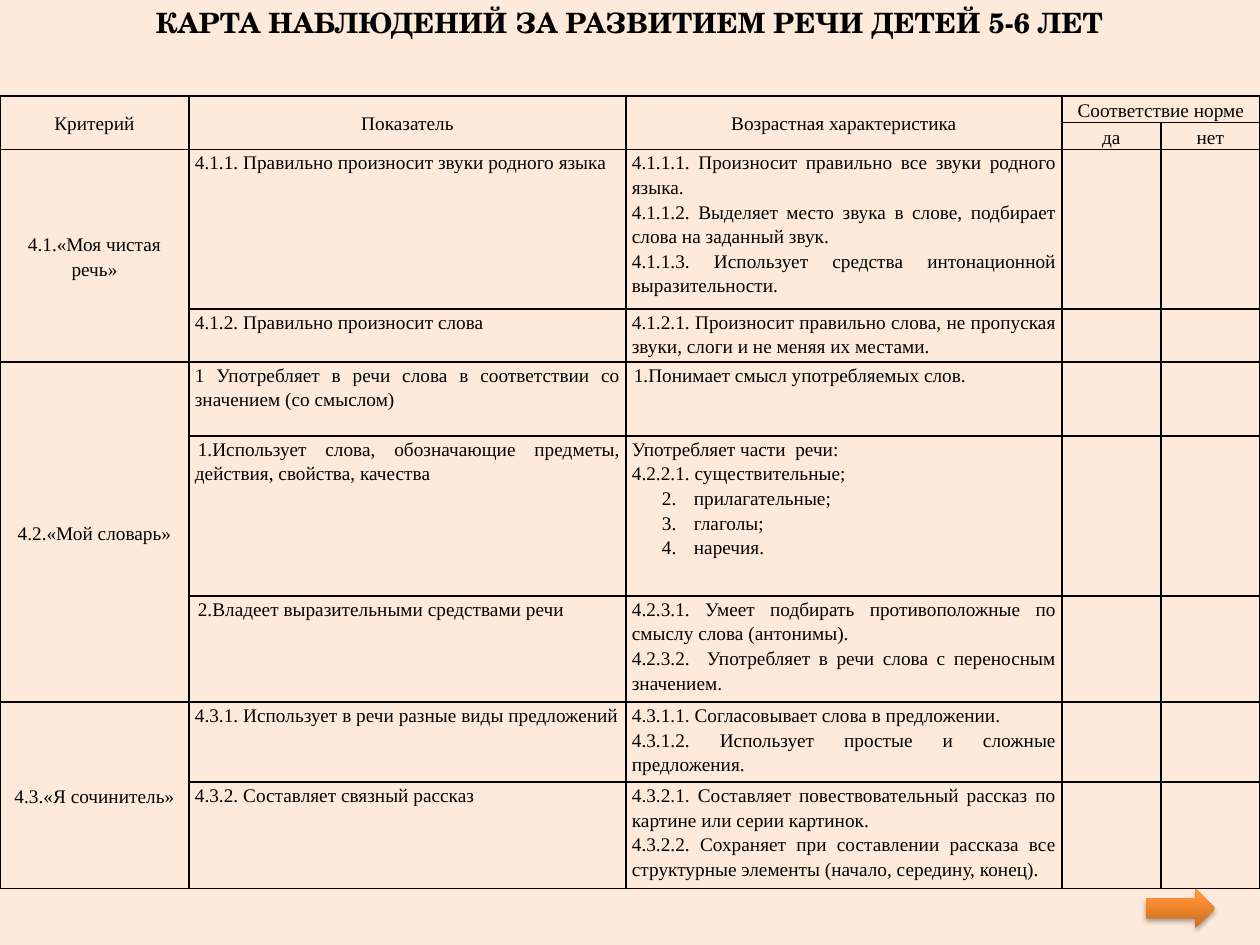
from lxml.etree import SubElement
from pptx import Presentation
from pptx.dml.color import RGBColor
from pptx.enum.shapes import MSO_SHAPE as SHAPE
from pptx.enum.text import MSO_ANCHOR as ANCHOR, PP_ALIGN as ALIGN
from pptx.oxml.ns import qn
from pptx.util import Emu, Pt

PX = 914400 // 126
COLORS = {"background": "FDEADA", "ink": "000000",
          "arrow_dark": "CC6E20", "arrow_light": "FF9034"}
TITLE_FONT, TABLE_FONT = "TeX Gyre Schola", "Times New Roman"

TITLE = "КАРТА НАБЛЮДЕНИЙ ЗА РАЗВИТИЕМ РЕЧИ ДЕТЕЙ 5-6 ЛЕТ"
HEADERS = ["Критерий", "Показатель", "Возрастная характеристика"]
NORM, NORM_ANSWERS = "Соответствие норме", ["да", "нет"]

# A numbered paragraph is (text, first number, level, left margin px, indent px)
CRITERIA = [
    ("4.1.«Моя чистая речь»", [
        (["4.1.1. Правильно произносит звуки родного языка"],
         ["4.1.1.1. Произносит правильно все звуки родного языка.",
          "4.1.1.2. Выделяет место звука в слове, подбирает слова на заданный звук.",
          "4.1.1.3. Использует средства интонационной выразительности."]),
        (["4.1.2. Правильно произносит слова"],
         ["4.1.2.1. Произносит правильно слова, не пропуская звуки, слоги и не меняя их местами."]),
    ]),
    ("4.2.«Мой словарь»", [
        (["1 Употребляет в речи слова в соответствии со значением (со смыслом)"],
         [("Понимает смысл употребляемых слов.", 1, 3, 0, 2)]),
        ([("Использует слова, обозначающие предметы, действия, свойства, качества", 1, 2, 0, 3)],
         ["Употребляет части  речи:",
          "4.2.2.1. существительные;",
          ("прилагательные;", 2, 3, 62, -32),
          ("глаголы;", 2, 3, 62, -32),
          ("наречия.", 2, 3, 62, -32)]),
        ([("Владеет выразительными средствами речи", 2, 2, 0, 3)],
         ["4.2.3.1. Умеет подбирать противоположные по смыслу слова (антонимы).",
          "4.2.3.2.  Употребляет в речи слова с переносным значением."]),
    ]),
    ("4.3.«Я сочинитель»", [
        (["4.3.1. Использует в речи разные виды предложений"],
         ["4.3.1.1. Согласовывает слова в предложении.",
          "4.3.1.2. Использует простые и сложные предложения."]),
        (["4.3.2. Составляет связный рассказ"],
         ["4.3.2.1. Составляет повествовательный рассказ по картине или серии картинок.",
          "4.3.2.2. Сохраняет при составлении рассказа все структурные элементы (начало, середину, конец)."]),
    ]),
]
COLUMN_WIDTHS = [189, 437, 436, 99, 99]
ROW_HEIGHTS = [26, 27, 159, 53, 74, 160, 105, 80, 106]
TABLE_TOP = 96


def px(*lengths):
    return [Emu(length * PX) for length in lengths]


def color(name):
    return RGBColor.from_string(COLORS[name])


def add_run(paragraph, text, font, size, bold=False):
    run = paragraph.add_run()
    run.text = text
    run.font.name, run.font.size, run.font.bold = font, Pt(size), bold
    run.font.color.rgb = color("ink")


def number(paragraph, start, level, margin, indent):
    paragraph.level = level
    props = paragraph._p.get_or_add_pPr()
    props.set("marL", str(margin * PX))
    props.set("indent", str(indent * PX))
    SubElement(props, qn("a:buFont"), typeface="+mj-lt")
    SubElement(props, qn("a:buAutoNum"), type="arabicPeriod", startAt=str(start))


def write(cell, items, align=ALIGN.JUSTIFY, anchor=ANCHOR.TOP):
    cell.vertical_anchor = anchor
    for index, item in enumerate(items):
        frame = cell.text_frame
        paragraph = frame.add_paragraph() if index else frame.paragraphs[0]
        paragraph.alignment, paragraph.line_spacing = align, 1.15
        text, *numbering = [item] if isinstance(item, str) else item
        if numbering:
            number(paragraph, *numbering)
        add_run(paragraph, text, TABLE_FONT, 11)


def write_centred(cell, text):
    write(cell, [text], ALIGN.CENTER, ANCHOR.MIDDLE)


def style_cell(cell):
    cell.margin_left, cell.margin_right, cell.margin_top, cell.margin_bottom = px(6, 6, 0, 0)
    props = cell._tc.get_or_add_tcPr()
    for side in ("lnL", "lnR", "lnT", "lnB"):
        line = SubElement(props, qn(f"a:{side}"), w=str(Pt(1)))
        fill = SubElement(line, qn("a:solidFill"))
        SubElement(fill, qn("a:srgbClr"), val=COLORS["ink"])
    cell.fill.background()


def add_title(slide):
    frame = slide.shapes.add_textbox(*px(0, -1, 1260, 47)).text_frame
    frame.word_wrap = True
    frame.paragraphs[0].alignment = ALIGN.CENTER
    add_run(frame.paragraphs[0], TITLE, TITLE_FONT, 16, bold=True)


def add_observation_table(slide):
    table = slide.shapes.add_table(
        len(ROW_HEIGHTS), len(COLUMN_WIDTHS),
        *px(0, TABLE_TOP, sum(COLUMN_WIDTHS), sum(ROW_HEIGHTS))).table
    table.first_row = table.horz_banding = False
    for column, width in zip(table.columns, px(*COLUMN_WIDTHS)):
        column.width = width
    for row, height in zip(table.rows, px(*ROW_HEIGHTS)):
        row.height = height
    for cell in table.iter_cells():
        style_cell(cell)

    for col, header in enumerate(HEADERS):
        table.cell(0, col).merge(table.cell(1, col))
        write_centred(table.cell(0, col), header)
    norm_col = len(HEADERS)
    table.cell(0, norm_col).merge(table.cell(0, norm_col + 1))
    write_centred(table.cell(0, norm_col), NORM)
    for col, answer in enumerate(NORM_ANSWERS, norm_col):
        write_centred(table.cell(1, col), answer)

    top = 2
    for criterion, indicators in CRITERIA:
        table.cell(top, 0).merge(table.cell(top + len(indicators) - 1, 0))
        write_centred(table.cell(top, 0), criterion)
        for row, (indicator, traits) in enumerate(indicators, top):
            write(table.cell(row, 1), indicator)
            write(table.cell(row, 2), traits)
        top += len(indicators)


def add_next_arrow(slide):
    arrow = slide.shapes.add_shape(SHAPE.RIGHT_ARROW, *px(1146, 889, 69, 39))
    arrow.line.fill.background()
    arrow.fill.gradient()
    arrow.fill.gradient_angle = 90
    stops = zip(arrow.fill.gradient_stops, ("arrow_dark", "arrow_light"), (0, 0.8))
    for stop, name, position in stops:
        stop.color.rgb, stop.position = color(name), position
    arrow.shadow.inherit = False
    effects = arrow._element.spPr.find(qn("a:effectLst"))
    shadow = SubElement(effects, qn("a:outerShdw"), blurRad=str(Pt(3.1)),
                        dist=str(Pt(1.8)), dir="5400000", rotWithShape="0")
    tint = SubElement(shadow, qn("a:srgbClr"), val=COLORS["ink"])
    SubElement(tint, qn("a:alpha"), val="35000")


def main():
    deck = Presentation()
    deck.slide_width, deck.slide_height = px(1260, 945)
    slide = deck.slides.add_slide(deck.slide_layouts[6])
    slide.background.fill.solid()
    slide.background.fill.fore_color.rgb = color("background")
    add_title(slide)
    add_observation_table(slide)
    add_next_arrow(slide)
    deck.save("out.pptx")


if __name__ == "__main__":
    main()
